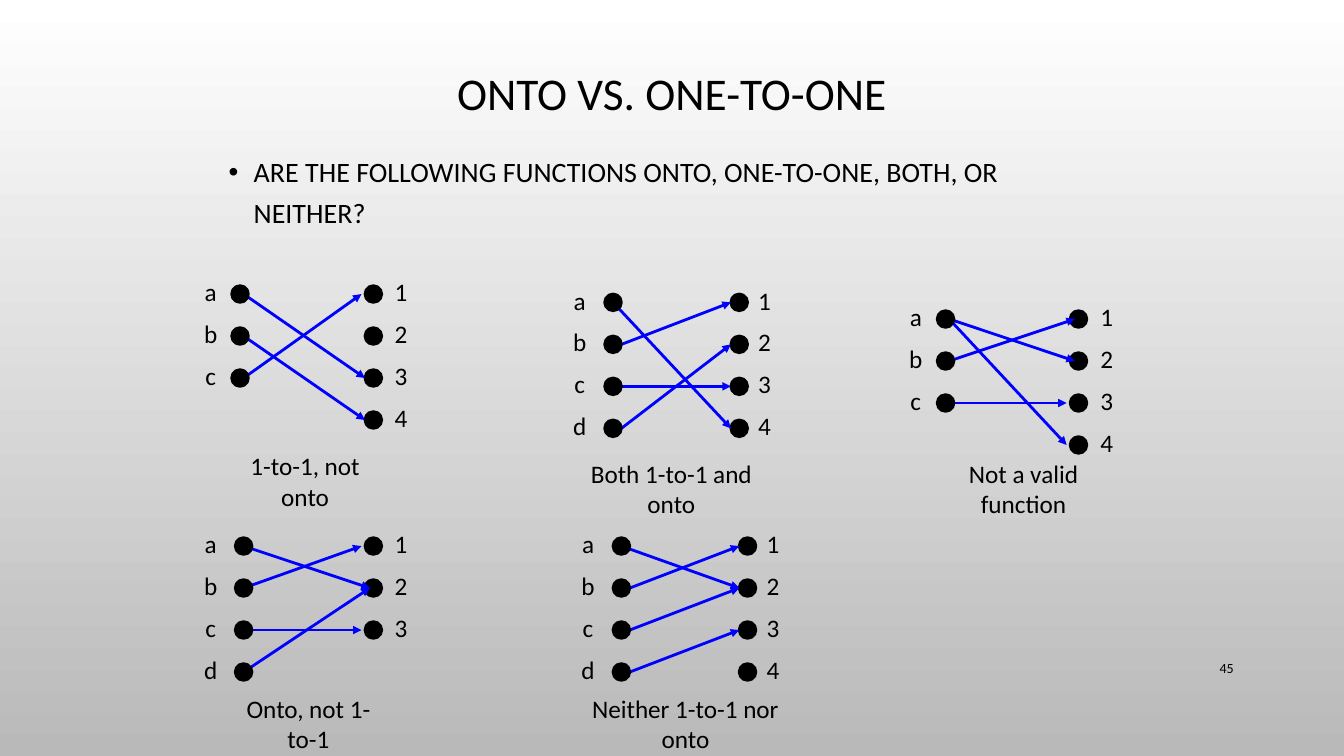
import dataclasses

import pptx
import pptx.dml.color
import pptx.enum.shapes
import pptx.enum.text
import pptx.oxml
import pptx.oxml.ns
import pptx.util

Cm = pptx.util.Cm
Pt = pptx.util.Pt
Align = pptx.enum.text.PP_ALIGN
Anchor = pptx.enum.text.MSO_ANCHOR


def color(code):
    return pptx.dml.color.RGBColor.from_string(code)


def add_element(parent, tag, **attributes):
    element = pptx.oxml.parse_xml(f"<{tag} {pptx.oxml.ns.nsdecls('a')}/>")
    for name, value in attributes.items():
        element.set(name, str(value))
    parent.append(element)


@dataclasses.dataclass
class Theme:
    font: str = "Calibri"
    ink: str = "000000"
    arrow: str = "0000FF"
    background_top: str = "FFFFFF"
    background_bottom: str = "B9B9B9"
    title_size: float = 32.4
    body_size: float = 20
    label_size: float = 18
    number_size: float = 10
    line_width: float = 2


@dataclasses.dataclass
class Mapping:
    """Centres of the two dot columns, label box edges, and arrows as
    (ends, gap after the start dot's centre, gap before the end dot's centre)."""
    domain: str
    codomain: str
    domain_x: float
    codomain_x: float
    domain_label_x: float
    codomain_label_x: float
    top: float
    arrows: list


DOT_SIZE = 0.42
ROW_PITCH = 1.058
LABEL_RISE = 0.85
LABEL_WIDTH = 0.86
NEAR, EDGE, FAR = 0.09, 0.21, 0.3

MAPPINGS = [
    Mapping("abc", "1234", 6.05, 9.41, 4.88, 9.68, 7.41,
            [("b4", NEAR, EDGE), ("a3", NEAR, EDGE), ("c1", NEAR, FAR)]),
    Mapping("abcd", "123", 6.14, 9.41, 4.88, 9.68, 13.76,
            [("b1", 0, FAR), ("a2", 0, NEAR), ("c3", 0, FAR), ("d2", 0, NEAR)]),
    Mapping("abcd", "1234", 15.45, 18.63, 14.18, 18.84, 7.62,
            [("c3", EDGE, EDGE), ("a4", 0, EDGE), ("d2", EDGE, EDGE), ("b1", EDGE, EDGE)]),
    Mapping("abcd", "1234", 15.66, 18.84, 14.39, 19.05, 13.76,
            [("c2", EDGE, EDGE), ("a2", 0, EDGE), ("d3", EDGE, EDGE), ("b1", EDGE, EDGE)]),
    Mapping("abc", "1234", 23.83, 27.18, 22.65, 27.46, 8.04,
            [("b1", NEAR, NEAR), ("a2", NEAR, NEAR), ("c3", NEAR, FAR), ("a4", NEAR, FAR)]),
]

CAPTIONS = [
    ("1-to-1, not onto", 5.44, 11.23, 4.5),
    ("Onto, not 1-to-1", 5.44, 17.35, 4.67),
    ("Both 1-to-1 and onto", 14, 11.43, 5.84),
    ("Not a valid function", 23.04, 11.43, 5.51),
    ("Neither 1-to-1 nor onto", 14.05, 17.35, 6.45),
]


class SlideBuilder:
    def __init__(self, slide, theme):
        self.slide = slide
        self.theme = theme
        self.shapes = slide.shapes

    def background(self):
        fill = self.slide.background.fill
        fill.gradient()
        fill.gradient_angle = 270
        shades = (self.theme.background_top, self.theme.background_bottom)
        for position, (stop, shade) in enumerate(zip(fill.gradient_stops, shades)):
            stop.position = position
            stop.color.rgb = color(shade)

    def text(self, text, left, top, width, height, *, size, align=Align.CENTER,
             anchor=Anchor.TOP, spacing=1.0, wrap=True, side_inset=0.25, bullet=False):
        """Add a text box; each line of the text becomes a paragraph."""
        box = self.shapes.add_textbox(Cm(left), Cm(top), Cm(width), Cm(height))
        frame = box.text_frame
        frame.word_wrap = wrap
        frame.vertical_anchor = anchor
        frame.margin_left = frame.margin_right = Cm(side_inset)
        frame.text = text
        for para in frame.paragraphs:
            para.alignment = align
            para.line_spacing = spacing
            if bullet:
                properties = para._p.get_or_add_pPr()
                properties.set("marL", str(Cm(0.635)))
                properties.set("indent", str(Cm(-0.635)))
                add_element(properties, "a:buFont", typeface="Arial")
                add_element(properties, "a:buChar", char="•")
            for span in para.runs:
                span.font.name = self.theme.font
                span.font.size = Pt(size)
                span.font.color.rgb = color(self.theme.ink)

    def dot(self, center_x, center_y):
        shape = self.shapes.add_shape(
            pptx.enum.shapes.MSO_SHAPE.OVAL, Cm(center_x - DOT_SIZE / 2),
            Cm(center_y - DOT_SIZE / 2), Cm(DOT_SIZE), Cm(DOT_SIZE))
        shape.shadow.inherit = False
        shape.fill.solid()
        shape.fill.fore_color.rgb = color(self.theme.ink)
        shape.line.color.rgb = color(self.theme.ink)
        shape.line.width = Pt(self.theme.line_width)

    def arrow(self, start_x, start_y, end_x, end_y):
        connector = self.shapes.add_connector(
            pptx.enum.shapes.MSO_CONNECTOR.STRAIGHT,
            Cm(start_x), Cm(start_y), Cm(end_x), Cm(end_y))
        connector.line.color.rgb = color(self.theme.arrow)
        connector.line.width = Pt(self.theme.line_width)
        add_element(connector.line._get_or_add_ln(), "a:tailEnd", type="triangle")
        add_element(connector._element.spPr, "a:effectLst")

    def labels(self, names, left, top):
        self.text("\n".join(names), left, top - LABEL_RISE, LABEL_WIDTH,
                  len(names) * ROW_PITCH + 0.25, size=self.theme.label_size,
                  spacing=1.38, wrap=False)

    def mapping(self, mapping):
        def row(index):
            return mapping.top + index * ROW_PITCH

        self.shapes = self.slide.shapes.add_group_shape().shapes
        for index in range(len(mapping.codomain)):
            self.dot(mapping.codomain_x, row(index))
        self.labels(mapping.codomain, mapping.codomain_label_x, mapping.top)
        self.labels(mapping.domain, mapping.domain_label_x, mapping.top)
        for (source, target), start_gap, end_gap in mapping.arrows:
            self.arrow(mapping.domain_x + start_gap, row(mapping.domain.index(source)),
                       mapping.codomain_x - end_gap, row(mapping.codomain.index(target)))
        for index in range(len(mapping.domain)):
            self.dot(mapping.domain_x, row(index))
        self.shapes = self.slide.shapes


def main():
    deck = pptx.Presentation()
    deck.slide_width = Cm(33.87)
    deck.slide_height = Cm(19.05)
    theme = Theme()
    page = SlideBuilder(deck.slides.add_slide(deck.slide_layouts[6]), theme)
    page.background()
    page.text("45", 29.21, 16.33, 2.13, 1.02, size=theme.number_size,
              align=Align.RIGHT, anchor=Anchor.MIDDLE)
    page.text("ONTO VS. ONE-TO-ONE", 2.54, 1.73, 28.78, 1.37, size=theme.title_size,
              anchor=Anchor.MIDDLE, spacing=0.9)
    page.text("ARE THE FOLLOWING FUNCTIONS ONTO, ONE-TO-ONE, BOTH, OR NEITHER?",
              5.51, 3.61, 22.6, 3.18, size=theme.body_size, align=Align.LEFT,
              spacing=1.2, bullet=True)
    for mapping in MAPPINGS:
        page.mapping(mapping)
    for caption, left, top, width in CAPTIONS:
        page.text(caption, left, top, width, 1.02, size=theme.label_size, side_inset=0.4)
    deck.save("out.pptx")


if __name__ == "__main__":
    main()
